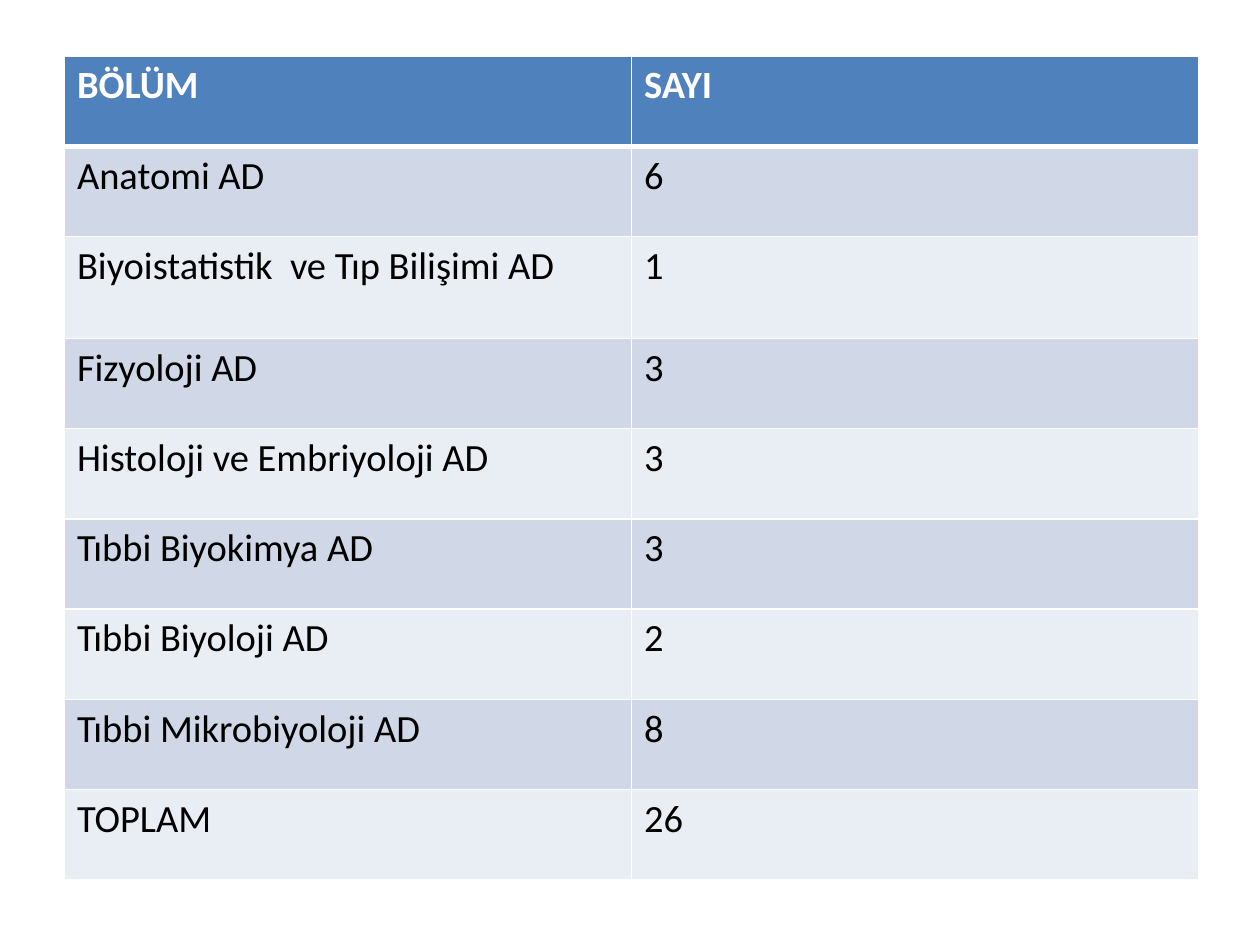
from lxml import etree
from pptx import Presentation
from pptx.dml.color import RGBColor
from pptx.oxml.ns import qn
from pptx.util import Cm, Pt

FONT = "Calibri"
WHITE, BLACK, HEADER_BLUE = "FFFFFF", "000000", "4F81BD"
BANDS = ("E9EDF4", "D0D8E8")
ROW_HEIGHT, TALL_ROW_HEIGHT, TALL_ROW = 1.82, 2.05, 2
COLUMN_WIDTH = 11.43
THIN, THICK = 1, 3

DEPARTMENTS = [
    ("BÖLÜM", "SAYI"),
    ("Anatomi AD", "6"),
    ("Biyoistatistik  ve Tıp Bilişimi AD", "1"),
    ("Fizyoloji AD", "3"),
    ("Histoloji ve Embriyoloji AD", "3"),
    ("Tıbbi Biyokimya AD", "3"),
    ("Tıbbi Biyoloji AD", "2"),
    ("Tıbbi Mikrobiyoloji AD", "8"),
    ("TOPLAM", "26"),
]


def color(value):
    """Return the colour for a hex string."""
    return RGBColor.from_string(value)


def add_borders(cell, widths):
    """Draw white cell borders, with widths in points keyed by side."""
    properties = cell._tc.get_or_add_tcPr()
    for side, width in widths.items():
        line = etree.SubElement(properties, qn(f"a:ln{side}"), w=str(Pt(width)))
        fill = etree.SubElement(line, qn("a:solidFill"))
        etree.SubElement(fill, qn("a:srgbClr"), val=WHITE)


def fill_cell(cell, text, row):
    """Write and style one cell according to its row."""
    is_header = row == 0
    add_borders(cell, {
        "L": THIN,
        "R": THIN,
        "T": THICK if row == 1 else THIN,
        "B": THICK if is_header else THIN,
    })
    cell.fill.solid()
    cell.fill.fore_color.rgb = color(HEADER_BLUE if is_header else BANDS[row % 2])
    cell.text_frame.text = text
    font = cell.text_frame.paragraphs[0].runs[0].font
    font.name = FONT
    font.size = Pt(22)
    font.bold = is_header
    font.color.rgb = color(WHITE if is_header else BLACK)


def add_department_table(page):
    """Add the table of departments and their counts."""
    row_count, column_count = len(DEPARTMENTS), len(DEPARTMENTS[0])
    table = page.shapes.add_table(
        row_count, column_count, Cm(1.3), Cm(1.13),
        Cm(column_count * COLUMN_WIDTH),
        Cm((row_count - 1) * ROW_HEIGHT + TALL_ROW_HEIGHT),
    ).table
    for column in table.columns:
        column.width = Cm(COLUMN_WIDTH)
    for row, texts in enumerate(DEPARTMENTS):
        table.rows[row].height = Cm(TALL_ROW_HEIGHT if row == TALL_ROW else ROW_HEIGHT)
        for column, text in enumerate(texts):
            fill_cell(table.cell(row, column), text, row)


def main():
    """Build the slide and save the deck."""
    deck = Presentation()
    deck.slide_width, deck.slide_height = Cm(25.4), Cm(19.05)
    page = deck.slides.add_slide(deck.slide_layouts[6])
    add_department_table(page)
    deck.save("out.pptx")


if __name__ == "__main__":
    main()
